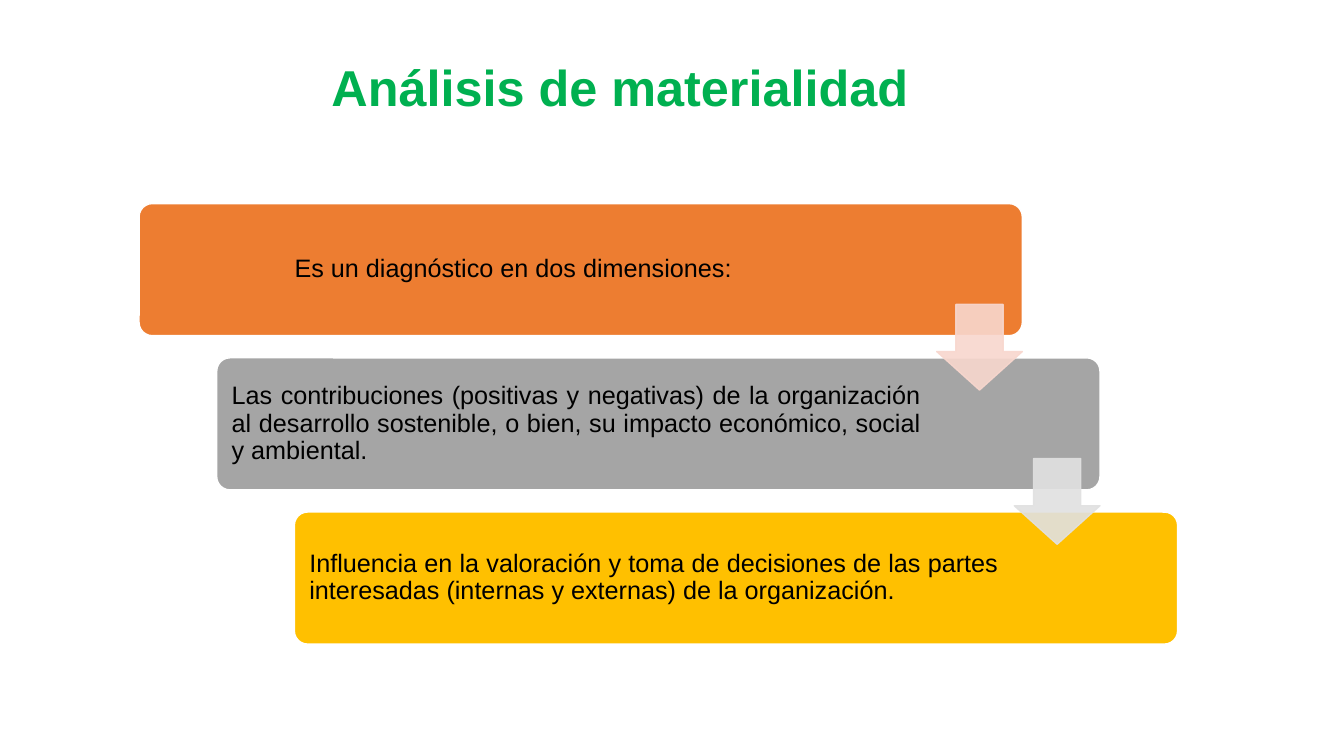
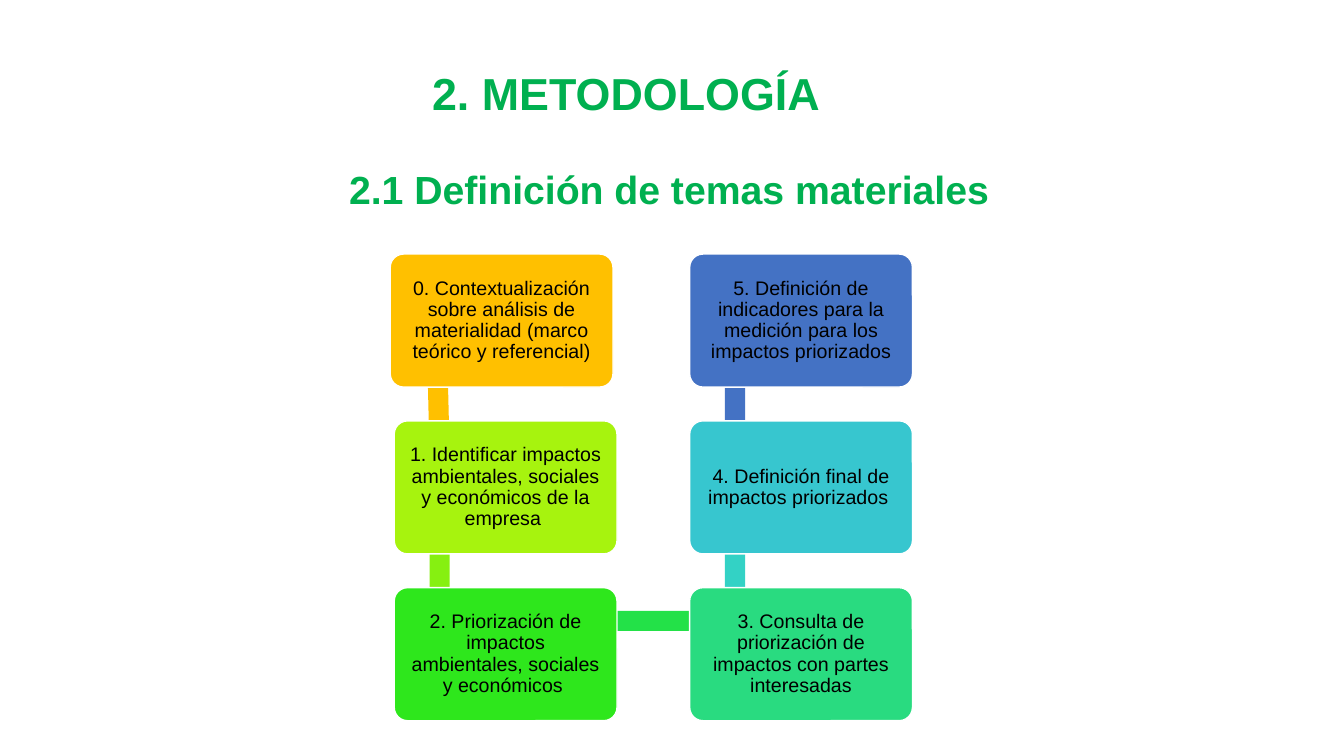
from math import atan2, degrees, hypot

from lxml.etree import SubElement
from pptx import Presentation
from pptx.dml.color import RGBColor
from pptx.enum.shapes import MSO_SHAPE
from pptx.enum.text import MSO_ANCHOR, MSO_AUTO_SIZE, PP_ALIGN
from pptx.oxml.ns import qn
from pptx.util import Inches, Pt

GREEN = RGBColor(0x00, 0xB0, 0x50)
BLACK = RGBColor(0x00, 0x00, 0x00)
WHITE = RGBColor(0xFF, 0xFF, 0xFF)
ORANGE = RGBColor(0xED, 0x7D, 0x31)
GRAY = RGBColor(0xA5, 0xA5, 0xA5)
GOLD = RGBColor(0xFF, 0xC0, 0x00)
PINK = RGBColor(0xF8, 0xD7, 0xCE)
SILVER = RGBColor(0xE1, 0xE1, 0xE1)
BLUE = RGBColor(0x44, 0x72, 0xC4)
LIME = RGBColor(0xA7, 0xF3, 0x0E)
LEAF = RGBColor(0x86, 0xF0, 0x11)
VIVID = RGBColor(0x2E, 0xE7, 0x1C)
EMERALD = RGBColor(0x23, 0xE1, 0x48)
MINT = RGBColor(0x29, 0xDB, 0x80)
TEAL = RGBColor(0x33, 0xD2, 0xC5)
CYAN = RGBColor(0x37, 0xC6, 0xCF)

HEADING = {"name": "Arial", "bold": True}
BODY = {"name": "Arial", "bold": False}

DIMENSIONS = [
    ("Es un diagnóstico en dos dimensiones:", ORANGE, PP_ALIGN.CENTER, 7.34, PINK),
    ("Las contribuciones (positivas y negativas) de la organización al desarrollo "
     "sostenible, o bien, su impacto económico, social y ambiental.",
     GRAY, PP_ALIGN.JUSTIFY, 7.05, SILVER),
    ("Influencia en la valoración y toma de decisiones de las partes interesadas "
     "(internas y externas) de la organización.",
     GOLD, PP_ALIGN.JUSTIFY, 7.05, None),
]
STAIR_LEFT, STAIR_TOP, STAIR_WIDTH, STAIR_HEIGHT = 1.38, 2.02, 8.76, 1.31
STAIR_SHIFT, STAIR_PITCH = 0.77, 1.53
ARROW_SIZE, ARROW_DROP = 0.85, 1

STEPS = [
    ("0. Contextualización sobre análisis de materialidad (marco teórico y referencial)",
     GOLD, GOLD, 0, 0),
    ("1. Identificar impactos ambientales, sociales y económicos de la empresa ",
     LIME, LEAF, 0, 1),
    ("2. Priorización de impactos ambientales, sociales y económicos ",
     VIVID, EMERALD, 0, 2),
    ("3. Consulta de priorización de impactos con partes interesadas",
     MINT, TEAL, 1, 2),
    ("4. Definición final de impactos priorizados ", CYAN, BLUE, 1, 1),
    ("5. Definición de indicadores para la medición para los impactos priorizados",
     BLUE, None, 1, 0),
]
STEP_LEFT, STEP_TOP, STEP_WIDTH, STEP_HEIGHT = 3.91, 2.52, 2.21, 1.32
COLUMN_PITCH, ROW_PITCH = 2.93, 1.655
FIRST_STEP_OFFSET = -0.04
ANCHOR_X, ANCHOR_Y, BAR_THICKNESS = 0.45, 0.33, 0.2


def write(shape, text, size, color, font, align, spacing, **frame_format):
    frame = shape.text_frame
    frame.word_wrap = True
    frame.auto_size = MSO_AUTO_SIZE.NONE
    for name, value in frame_format.items():
        setattr(frame, name, value)
    para = frame.paragraphs[0]
    para.alignment = align
    para.line_spacing = spacing
    span = para.add_run()
    span.text = text
    span.font.size = Pt(size)
    span.font.color.rgb = color
    for name, value in font.items():
        setattr(span.font, name, value)


def add_heading(box, text, area, size, spacing=1.0):
    for name, value in zip(("left", "top", "width", "height"), area):
        setattr(box, name, Inches(value))
    write(box, text, size, GREEN, HEADING, PP_ALIGN.CENTER, spacing,
          vertical_anchor=MSO_ANCHOR.TOP)


def add_block(page, kind, left, top, width, height, fill, line=None):
    block = page.shapes.add_shape(
        kind, Inches(left), Inches(top), Inches(width), Inches(height))
    block.shadow.inherit = False
    block.fill.solid()
    block.fill.fore_color.rgb = fill
    if line is None:
        block.line.fill.background()
    else:
        block.line.color.rgb = line
        block.line.width = Pt(1)
    return block


def add_card(page, text, left, top, width, height, fill, size, align, inset, text_width):
    card = add_block(page, MSO_SHAPE.ROUNDED_RECTANGLE, left, top, width, height, fill, WHITE)
    card.adjustments[0] = 0.1
    edge = 0.04 + inset
    write(card, text, size, BLACK, BODY, align, 0.9,
          vertical_anchor=MSO_ANCHOR.MIDDLE,
          margin_left=Inches(edge), margin_top=Inches(edge), margin_bottom=Inches(edge),
          margin_right=Inches(width - 0.04 - text_width + inset))


def add_arrow(page, left, top, fill):
    arrow = add_block(page, MSO_SHAPE.DOWN_ARROW, left, top, ARROW_SIZE, ARROW_SIZE, fill, fill)
    arrow.adjustments[0], arrow.adjustments[1] = 0.55, 0.45
    for color in arrow._element.spPr.iter(qn("a:srgbClr")):
        SubElement(color, qn("a:alpha")).set("val", "90000")


def add_bar(page, start, end, fill):
    (x1, y1), (x2, y2) = start, end
    length = hypot(x2 - x1, y2 - y1)
    bar = add_block(page, MSO_SHAPE.RECTANGLE, (x1 + x2 - length) / 2,
                    (y1 + y2 - BAR_THICKNESS) / 2, length, BAR_THICKNESS, fill)
    bar.rotation = degrees(atan2(y2 - y1, x2 - x1))


def build_materiality(page):
    add_heading(page.shapes.title, "Análisis de materialidad", (0.4, 0.57, 11.5, 1.45), 36, 0.9)
    corners = [(STAIR_LEFT + i * STAIR_SHIFT, STAIR_TOP + i * STAIR_PITCH)
               for i in range(len(DIMENSIONS))]
    for (left, top), (text, fill, align, text_width, _) in zip(corners, DIMENSIONS):
        add_card(page, text, left, top, STAIR_WIDTH, STAIR_HEIGHT, fill, 18, align,
                 0.07, text_width)
    for (left, top), (*_, arrow_fill) in zip(corners, DIMENSIONS):
        if arrow_fill is not None:
            add_arrow(page, left + STAIR_WIDTH - ARROW_SIZE, top + ARROW_DROP, arrow_fill)


def build_methodology(page):
    add_heading(page.shapes.title, "2. METODOLOGÍA", (1.21, 0.6, 10, 0.64), 32)
    add_heading(page.shapes.add_textbox(0, 0, 0, 0), "2.1 Definición de temas materiales",
                (0.53, 1.59, 12.21, 0.57), 28)
    corners = [(STEP_LEFT + column * COLUMN_PITCH, STEP_TOP + row * ROW_PITCH)
               for *_, column, row in STEPS]
    corners[0] = (corners[0][0] + FIRST_STEP_OFFSET, corners[0][1])
    anchors = [(left + ANCHOR_X, top + ANCHOR_Y) for left, top in corners]
    for start, end, step in zip(anchors, anchors[1:], STEPS):
        add_bar(page, start, end, step[2])
    for (left, top), (text, fill, *_) in zip(corners, STEPS):
        add_card(page, text, left, top, STEP_WIDTH, STEP_HEIGHT, fill, 14,
                 PP_ALIGN.CENTER, 0.06, STEP_WIDTH - 0.08)


def main():
    deck = Presentation()
    deck.slide_width, deck.slide_height = Inches(13.33), Inches(7.5)
    for build in (build_materiality, build_methodology):
        build(deck.slides.add_slide(deck.slide_layouts[5]))
    deck.save("out.pptx")


if __name__ == "__main__":
    main()
